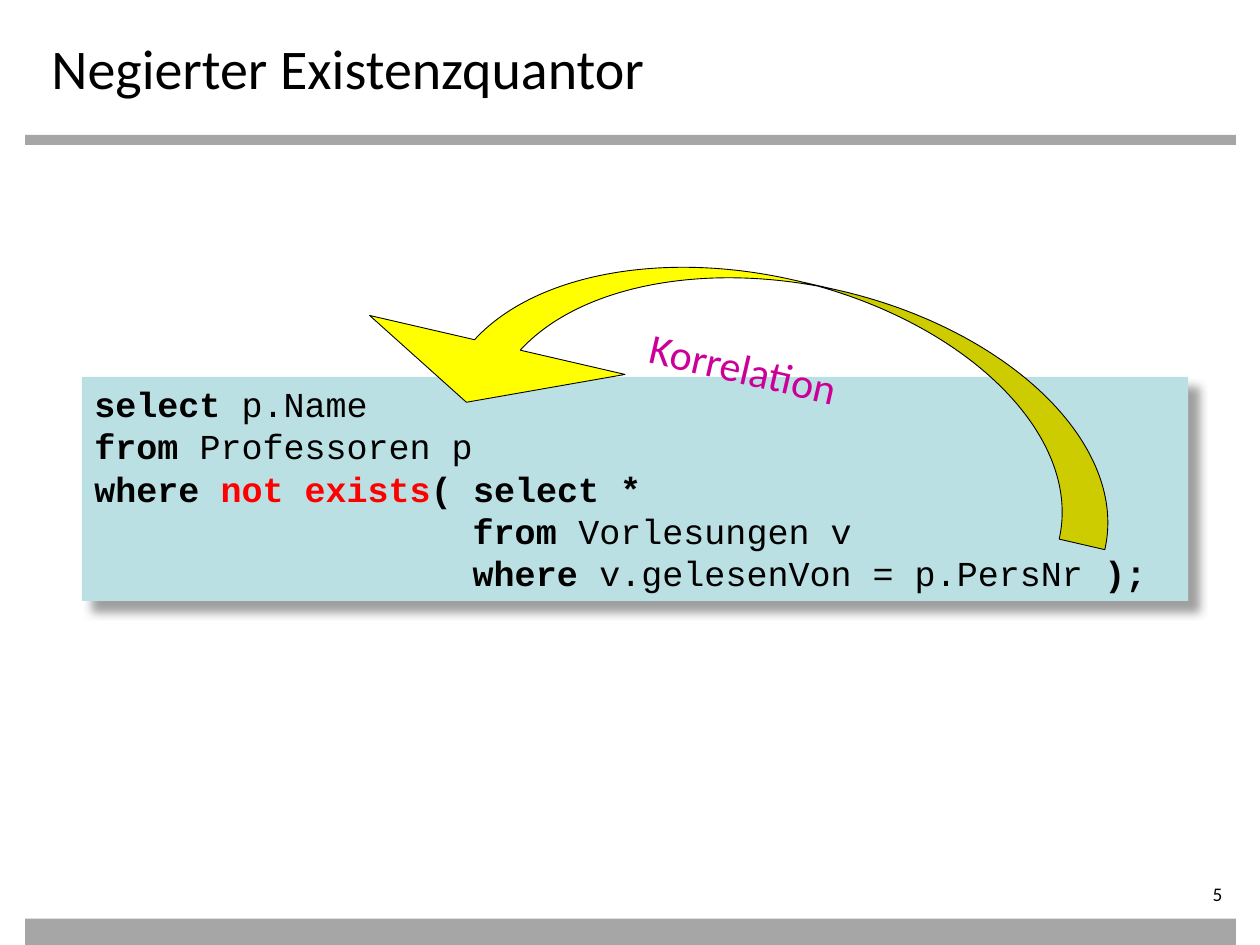
from lxml.etree import SubElement
from pptx import Presentation
from pptx.dml.color import RGBColor
from pptx.enum.shapes import MSO_SHAPE
from pptx.enum.text import MSO_ANCHOR, PP_ALIGN
from pptx.oxml import parse_xml
from pptx.oxml.ns import nsdecls
from pptx.util import Inches, Pt


def color(text):
    return RGBColor.from_string(text)


def style(run, size, face="Calibri", tone="000000", bold=False):
    run.font.size = Pt(size)
    run.font.name = face
    run.font.color.rgb = color(tone)
    run.font.bold = bold


deck = Presentation()
deck.slide_width, deck.slide_height = Inches(10), Inches(7.5)
slide = deck.slides.add_slide(deck.slide_layouts[6])
shapes = slide.shapes

made = []
for kind, left, top, width, height, fill in [
    (MSO_SHAPE.RECTANGLE, 0.2, 1.07, 9.61, 0.08, "A6A6A6"),
    (MSO_SHAPE.RECTANGLE, 0.2, 7.29, 9.61, 0.21, "A6A6A6"),
    (MSO_SHAPE.RECTANGLE, 0.65, 2.99, 8.78, 1.78, "BBE0E3"),
    (MSO_SHAPE.CURVED_UP_ARROW, 2.78, 2.15, 6.24, 1.53, "FFFF00"),
]:
    shape = shapes.add_shape(kind, Inches(left), Inches(top), Inches(width), Inches(height))
    shape.shadow.inherit = False
    shape.fill.solid()
    shape.fill.fore_color.rgb = color(fill)
    shape.line.fill.background()
    made.append(shape)
code, arrow = made[2:]

code._element.spPr.remove(code._element.spPr.find("{*}effectLst"))
code._element.spPr.append(parse_xml(
    f'<a:effectLst {nsdecls("a")}>'
    '<a:outerShdw blurRad="63500" dist="107950" dir="2700000" algn="ctr" rotWithShape="0">'
    '<a:srgbClr val="808080"><a:alpha val="75000"/></a:srgbClr>'
    '</a:outerShdw></a:effectLst>'))

black, red = "000000", "FF0000"
indent = " " * 18
lines = [
    [("select ", True, black), ("p.Name", False, black)],
    [("from ", True, black), ("Professoren p", False, black)],
    [("where ", True, black), ("not exists", True, red), ("( select *", True, black)],
    [(indent + "from ", True, black), ("Vorlesungen v", False, black)],
    [(indent + "where ", True, black), ("v.gelesenVon = p.PersNr ", False, black),
     (");", True, black)],
]
frame = code.text_frame
frame.word_wrap = True
frame.vertical_anchor = MSO_ANCHOR.TOP
for row, line in enumerate(lines):
    para = frame.add_paragraph() if row else frame.paragraphs[0]
    para.alignment = PP_ALIGN.LEFT
    for text, bold, tone in line:
        run = para.add_run()
        run.text = text
        style(run, 20, "Courier New", tone, bold)

arrow.rotation = 193
for spot, value in enumerate([0.243, 1.36, 0.326]):
    arrow.adjustments[spot] = value
arrow.line.color.rgb = color(black)
arrow.line.width = Pt(0.5)
frame = arrow.text_frame
frame.text = "Korrelation"
frame.word_wrap = False
frame.vertical_anchor = MSO_ANCHOR.MIDDLE
frame._txBody.bodyPr.set("rot", "10800000")
frame.paragraphs[0].alignment = PP_ALIGN.CENTER
style(frame.paragraphs[0].runs[0], 24, tone="CC0099")

title = shapes.add_textbox(Inches(0.31), Inches(0.22), Inches(9.69), Inches(0.55))
title.text_frame.word_wrap = True
title.text_frame.text = "Negierter Existenzquantor"
style(title.text_frame.paragraphs[0].runs[0], 32)

page = shapes.add_textbox(Inches(8.7), Inches(7), Inches(1.1), Inches(0.22))
frame = page.text_frame
frame.word_wrap = True
frame.margin_left = frame.margin_top = frame.margin_bottom = 0
para = frame.paragraphs[0]
para.alignment = PP_ALIGN.RIGHT
field = SubElement(para._p, "{http://schemas.openxmlformats.org/drawingml/2006/main}r")
SubElement(field, "{http://schemas.openxmlformats.org/drawingml/2006/main}t").text = "5"
style(para.runs[0], 11)

deck.save("out.pptx")
